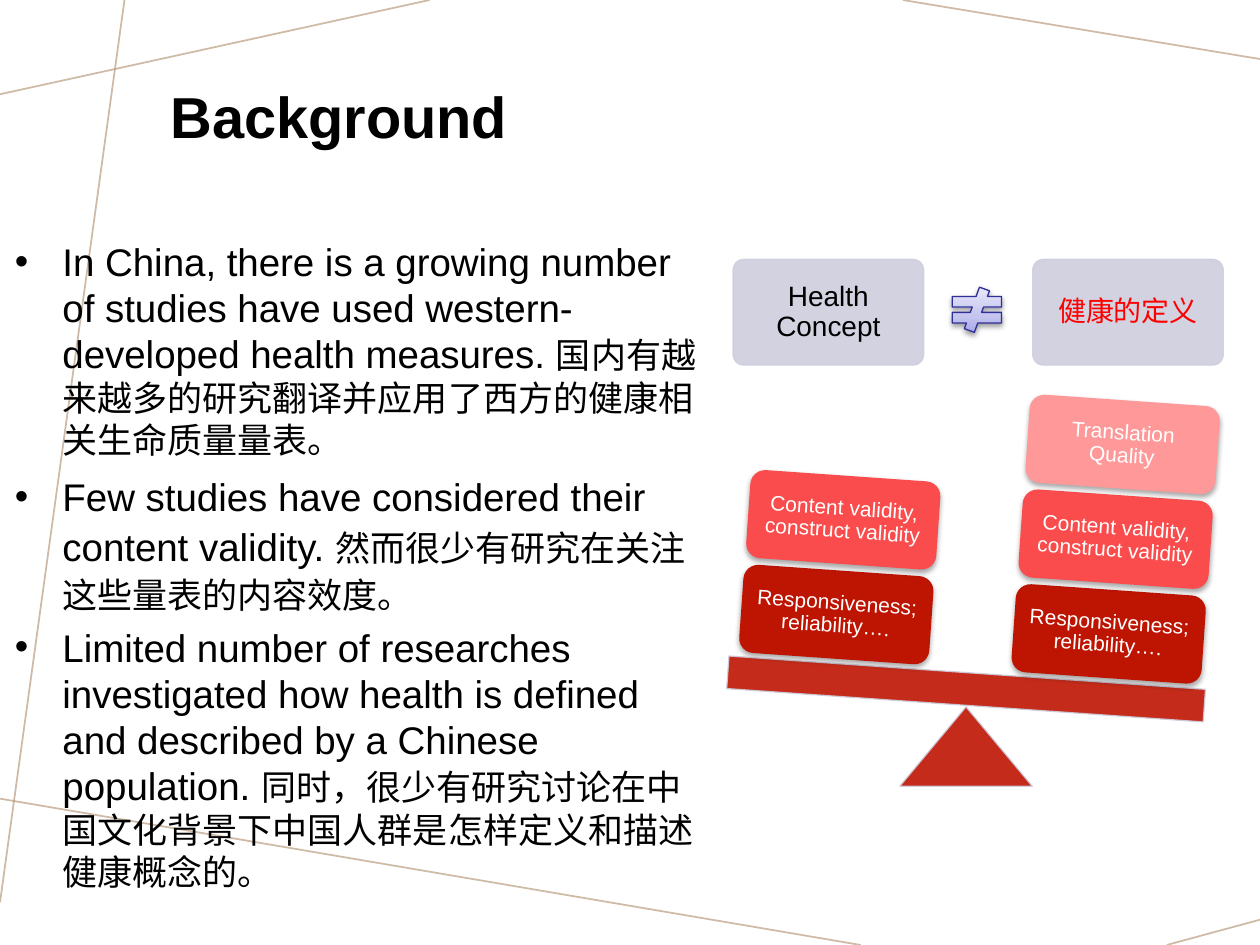
from copy import deepcopy

from lxml.etree import SubElement
from pptx import Presentation
from pptx.dml.color import RGBColor
from pptx.enum.shapes import MSO_CONNECTOR as LINK, MSO_SHAPE as SHAPE
from pptx.enum.text import MSO_ANCHOR as ANCHOR, PP_ALIGN as ALIGN
from pptx.oxml.ns import qn
from pptx.util import Cm, Pt

BLACK = RGBColor(0x00, 0x00, 0x00)
WHITE = RGBColor(0xFF, 0xFF, 0xFF)
RED = RGBColor(0xFF, 0x00, 0x00)
TAN = RGBColor(0xBA, 0x9E, 0x7F)
LAVENDER = RGBColor(0xCE, 0xCE, 0xDE)
DARK_RED = RGBColor(0xBE, 0x14, 0x02)
CORAL = RGBColor(0xFA, 0x4C, 0x4C)
PINK = RGBColor(0xFF, 0x99, 0x99)
NAVY = RGBColor(0x2F, 0x2F, 0x98)
SIGN_STOPS = [(0, RGBColor(0xA9, 0xA9, 0xE9)), (0.35, RGBColor(0xC4, 0xC4, 0xEF)),
              (1, RGBColor(0xE8, 0xE8, 0xFA))]

LATIN, CHINESE = "Arial", "Noto Sans CJK SC"
TILT = 4

POINTS = [
    ("In China, there is a growing number of studies have used western-developed health measures. ",
     "国内有越来越多的研究翻译并应用了西方的健康相关生命质量量表。", 1.0),
    ("Few studies have considered their content validity. ",
     "然而很少有研究在关注这些量表的内容效度。", 1.1),
    ("Limited number of researches investigated how health is defined and described by a Chinese population. ",
     "同时，很少有研究讨论在中国文化背景下中国人群是怎样定义和描述健康概念的。", 1.0),
]
CARDS = [("Responsiveness; reliability….", DARK_RED),
         ("Content validity, construct validity", CORAL),
         ("Translation Quality", PINK)]


def add_text(paragraph, text, size, color, face=LATIN, bold=False):
    run = paragraph.add_run()
    run.text = text
    font = run.font
    font.size, font.name, font.bold = Pt(size), face, bold
    font.color.rgb = color
    if face == CHINESE:
        SubElement(run._r.get_or_add_rPr(), qn("a:ea"), typeface=face)


def set_alpha(properties, percent):
    for color in properties.iter(qn("a:srgbClr")):
        SubElement(color, qn("a:alpha"), val=str(percent * 1000))


def add_shadow(shape, alpha, blur, distance):
    effects = shape._element.spPr.find(qn("a:effectLst"))
    shadow = SubElement(effects, qn("a:outerShdw"), blurRad=str(Pt(blur)),
                        dist=str(Pt(distance)), dir="5400000", rotWithShape="0")
    color = SubElement(shadow, qn("a:srgbClr"), val=str(BLACK))
    SubElement(color, qn("a:alpha"), val=str(alpha * 1000))


def add_block(slide, preset, left, top, width, height, fill, outlined=False):
    block = slide.shapes.add_shape(preset, Cm(left), Cm(top), Cm(width), Cm(height))
    block.shadow.inherit = False
    block.fill.solid()
    block.fill.fore_color.rgb = fill
    if outlined:
        block.line.color.rgb = LAVENDER
        block.line.width = Pt(0.75)
        set_alpha(block._element.spPr, 90)
    else:
        block.line.fill.background()
    return block


def add_label(block, text, size, color, inset, face=LATIN):
    frame = block.text_frame
    frame.word_wrap = True
    frame.vertical_anchor = ANCHOR.MIDDLE
    frame.margin_left = frame.margin_right = Cm(inset)
    frame.margin_top = frame.margin_bottom = Cm(inset)
    paragraph = frame.paragraphs[0]
    paragraph.alignment = ALIGN.CENTER
    paragraph.line_spacing = 0.9
    add_text(paragraph, text, size, color, face)


def draw_backdrop(slide, width, height):
    strokes = [((8.66, 0), (0, 1.9)), ((2.51, 0), (0, 18.19)),
               ((17.35, height), (0, 16.1)), ((width, 18.54), (23.52, height)),
               ((width, 1.19), (18.2, 0))]
    for start, end in strokes:
        stroke = slide.shapes.add_connector(LINK.STRAIGHT, *map(Cm, start + end))
        stroke.line.color.rgb = TAN
        stroke.line.width = Pt(1)
        set_alpha(stroke._element.spPr, 70)
        SubElement(stroke._element.spPr, qn("a:effectLst"))


def place_title(slide, left, top, width, height):
    title = slide.shapes.title
    title.left, title.top, title.width, title.height = map(Cm, (left, top, width, height))
    title.text_frame.vertical_anchor = ANCHOR.MIDDLE
    paragraph = title.text_frame.paragraphs[0]
    paragraph.alignment = ALIGN.LEFT
    paragraph.line_spacing = Pt(12)
    add_text(paragraph, "Background", 33, BLACK, bold=True)


def draw_points(slide, left, top, width, height):
    frame = slide.shapes.add_textbox(Cm(left), Cm(top), Cm(width), Cm(height)).text_frame
    frame.word_wrap = True
    for index, (english, chinese, spacing) in enumerate(POINTS):
        paragraph = frame.add_paragraph() if index else frame.paragraphs[0]
        paragraph.line_spacing = spacing
        paragraph.space_before = Pt(4.4)
        layout = paragraph._p.get_or_add_pPr()
        layout.set("marL", str(Cm(0.96)))
        layout.set("indent", str(-Cm(0.96)))
        SubElement(layout, qn("a:buFont"), typeface=LATIN)
        SubElement(layout, qn("a:buChar"), char="•")
        add_text(paragraph, english, 22, BLACK)
        add_text(paragraph, chinese, 20, BLACK, CHINESE)


def draw_concepts(slide, left, top, width, height):
    box_width = 3.84
    concepts = [(left, "Health Concept", BLACK, LATIN),
                (left + width - box_width, "健康的定义", RED, CHINESE)]
    for box_left, text, color, face in concepts:
        box = add_block(slide, SHAPE.ROUNDED_RECTANGLE, box_left, top,
                        box_width, height, LAVENDER, outlined=True)
        box.adjustments[0] = 0.1
        add_label(box, text, 16, color, 0.25, face)


def draw_scale(slide, left, top, width, height):
    base_width, base_height = 2.67, 1.6
    add_block(slide, SHAPE.ISOSCELES_TRIANGLE, left + (width - base_width) / 2,
              top + height - base_height, base_width, base_height, DARK_RED, outlined=True)
    beam = add_block(slide, SHAPE.RECTANGLE, left, top + 5.49, width, 0.66,
                     DARK_RED, outlined=True)
    beam.rotation = TILT
    stacks = [(left + 5.77, top + 3.82, CARDS), (left + 0.28, top + 3.43, CARDS[:2])]
    for stack_left, stack_top, cards in stacks:
        for level, (text, fill) in enumerate(cards):
            card = add_block(slide, SHAPE.ROUNDED_RECTANGLE, stack_left + 0.14 * level,
                             stack_top - 1.91 * level, 3.84, 1.78, fill)
            card.rotation = TILT
            add_shadow(card, 35, 3.1, 1.8)
            add_label(card, text, 12, WHITE, 0.22)


def draw_unequal_sign(slide, left, top, width, height):
    sign = add_block(slide, SHAPE.MATH_NOT_EQUAL, left, top, width, height, LAVENDER)
    sign.line.color.rgb = NAVY
    sign.line.width = Pt(0.75)
    sign.fill.gradient()
    sign.fill.gradient_angle = 90
    stops = sign._element.spPr.find(qn("a:gradFill")).find(qn("a:gsLst"))
    stops.append(deepcopy(stops[-1]))
    for stop, (position, color) in zip(sign.fill.gradient_stops, SIGN_STOPS):
        stop.position = position
        stop.color.rgb = color
    add_shadow(sign, 38, 3.1, 1.6)


def main():
    deck = Presentation()
    deck.slide_width, deck.slide_height = Cm(25.4), Cm(19.05)
    slide = deck.slides.add_slide(deck.slide_layouts[5])
    draw_backdrop(slide, 25.4, 19.05)
    place_title(slide, 3.18, 1.47, 20.52, 2.69)
    draw_points(slide, 0.05, 4.67, 14.55, 13.67)
    draw_concepts(slide, 14.78, 5.23, 9.88, 2.13)
    draw_scale(slide, 14.66, 8.07, 9.63, 7.78)
    draw_unequal_sign(slide, 19.02, 5.79, 1.35, 0.91)
    deck.save("out.pptx")


if __name__ == "__main__":
    main()
